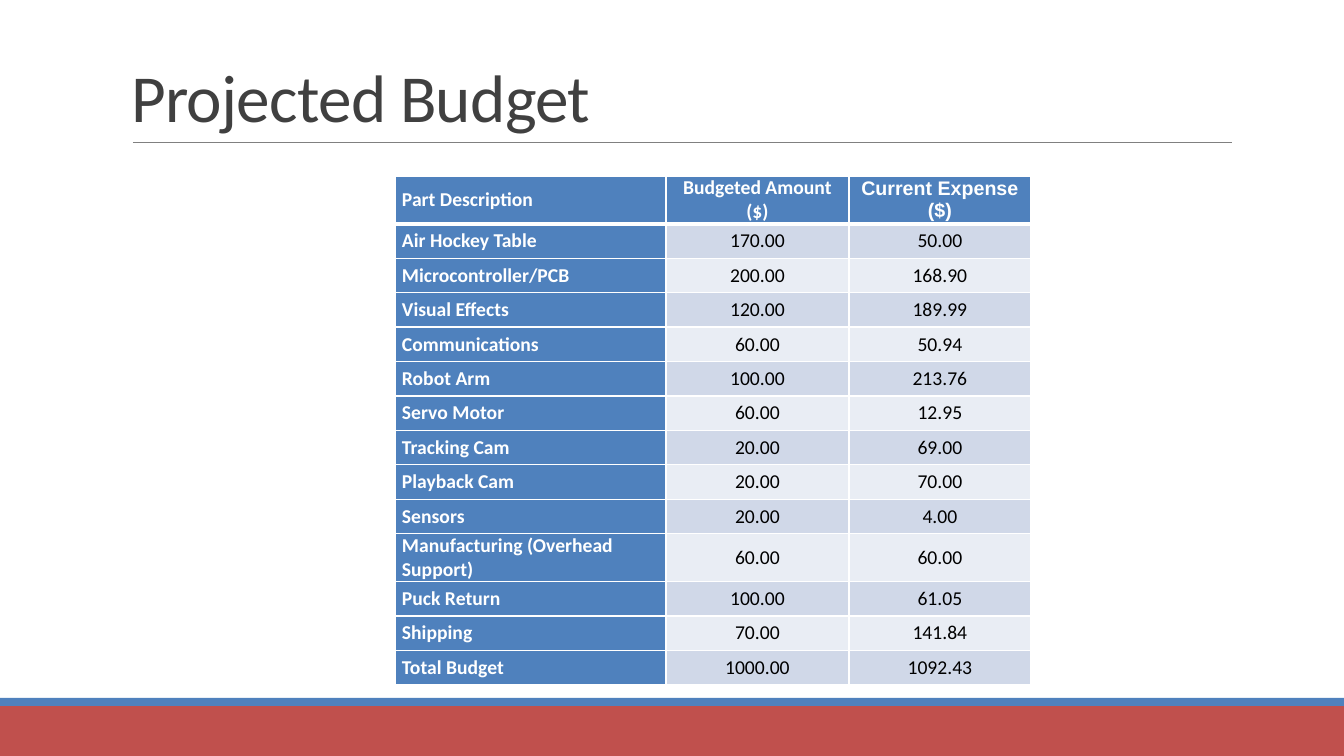
"""Build the projected budget slide with its expense table."""
from dataclasses import dataclass

from lxml.etree import SubElement
from pptx import Presentation
from pptx.dml.color import RGBColor
from pptx.enum.shapes import MSO_CONNECTOR, MSO_SHAPE
from pptx.enum.text import MSO_ANCHOR, MSO_AUTO_SIZE, PP_ALIGN
from pptx.oxml.ns import qn
from pptx.slide import Slide
from pptx.table import _Cell
from pptx.util import Emu, Pt

EMU_PER_PX = 914400 / 100.8
WHITE = RGBColor(0xFF, 0xFF, 0xFF)
BLACK = RGBColor(0x00, 0x00, 0x00)
BLUE = RGBColor(0x4F, 0x81, 0xBD)
RED = RGBColor(0xC0, 0x50, 0x4D)
GRAY = RGBColor(0x80, 0x80, 0x80)
TITLE_GRAY = RGBColor(0x40, 0x40, 0x40)
BAND_COLORS = (RGBColor(0xD0, 0xD8, 0xE8), RGBColor(0xE9, 0xED, 0xF4))

TABLE_LEFT, TABLE_TOP = 395, 176
COLUMN_WIDTHS = (271, 183, 182)
HEADER_HEIGHT = 38
BODY_HEIGHT = 448


@dataclass(frozen=True)
class Band:
    """A full-width colour band at the foot of the slide."""

    top: int
    height: int
    color: RGBColor


@dataclass(frozen=True)
class BudgetLine:
    """One row of the budget table."""

    description: str
    budgeted: str
    expense: str


FOOTER_BANDS = (Band(706, 50, RED), Band(698, 8, BLUE))
HEADER = BudgetLine("Part Description", "Budgeted Amount ($)", "Current Expense ($)")
BUDGET = (
    BudgetLine("Air Hockey Table", "170.00", "50.00"),
    BudgetLine("Microcontroller/PCB", "200.00", "168.90"),
    BudgetLine("Visual Effects", "120.00", "189.99"),
    BudgetLine("Communications", "60.00", "50.94"),
    BudgetLine("Robot Arm", "100.00", "213.76"),
    BudgetLine("Servo Motor", "60.00", "12.95"),
    BudgetLine("Tracking Cam", "20.00", "69.00"),
    BudgetLine("Playback Cam", "20.00", "70.00"),
    BudgetLine("Sensors", "20.00", "4.00"),
    BudgetLine("Manufacturing (Overhead Support)", "60.00", "60.00"),
    BudgetLine("Puck Return", "100.00", "61.05"),
    BudgetLine("Shipping", "70.00", "141.84"),
    BudgetLine("Total Budget", "1000.00", "1092.43"),
)


def px(length: float) -> Emu:
    """Convert pixels to EMU."""
    return Emu(round(length * EMU_PER_PX))


def add_band(slide: Slide, band: Band) -> None:
    """Draw one footer band."""
    shape = slide.shapes.add_shape(
        MSO_SHAPE.RECTANGLE, 0, px(band.top), px(1344), px(band.height)
    )
    shape.shadow.inherit = False
    shape.fill.solid()
    shape.fill.fore_color.rgb = band.color
    shape.line.fill.background()


def add_title_rule(slide: Slide) -> None:
    """Draw the thin line below the title."""
    rule = slide.shapes.add_connector(
        MSO_CONNECTOR.STRAIGHT, px(133), px(142), px(1232), px(142)
    )
    rule.line.color.rgb = GRAY
    rule.line.width = Pt(0.5)
    SubElement(rule._element.spPr, qn("a:effectLst"))


def format_title(slide: Slide, text: str) -> None:
    """Place and format the title placeholder."""
    title = slide.shapes.title
    title.left, title.top, title.width, title.height = px(121), px(31), px(1109), px(110)
    text_frame = title.text_frame
    text_frame.text = text
    text_frame.word_wrap = True
    text_frame.auto_size = MSO_AUTO_SIZE.NONE
    text_frame.vertical_anchor = MSO_ANCHOR.BOTTOM
    paragraph = text_frame.paragraphs[0]
    paragraph.alignment = PP_ALIGN.LEFT
    paragraph.line_spacing = 0.85
    run = paragraph.runs[0]
    run.font.name = "Calibri"
    run.font.size = Pt(48)
    run.font.color.rgb = TITLE_GRAY
    run._r.get_or_add_rPr().set("spc", "-50")


def add_borders(cell: _Cell, top: int, bottom: int) -> None:
    """Give a cell white borders, with top and bottom widths in points."""
    properties = cell._tc.get_or_add_tcPr()
    for side, width in (("L", 1), ("R", 1), ("T", top), ("B", bottom)):
        line = SubElement(properties, qn(f"a:ln{side}"), w=str(Pt(width)))
        fill = SubElement(line, qn("a:solidFill"))
        SubElement(fill, qn("a:srgbClr"), val=str(WHITE))


def format_cell(cell: _Cell, text: str, row: int, column: int) -> None:
    """Fill in one table cell and style it by its place."""
    is_heading = row == 0 or column == 0
    add_borders(cell, top=3 if row == 1 else 1, bottom=3 if row == 0 else 1)
    cell.fill.solid()
    cell.fill.fore_color.rgb = BLUE if is_heading else BAND_COLORS[(row - 1) % 2]
    cell.margin_left = cell.margin_right = px(7)
    cell.margin_top = cell.margin_bottom = 0
    cell.vertical_anchor = MSO_ANCHOR.MIDDLE
    cell.text_frame.text = text
    paragraph = cell.text_frame.paragraphs[0]
    paragraph.alignment = PP_ALIGN.LEFT if column == 0 else PP_ALIGN.CENTER
    font = paragraph.runs[0].font
    font.name = "Arial" if (row, column) == (0, 2) else "Calibri"
    font.size = Pt(14)
    font.bold = is_heading
    font.color.rgb = WHITE if is_heading else BLACK


def add_budget_table(slide: Slide) -> None:
    """Draw the budget table."""
    lines = (HEADER, *BUDGET)
    table = slide.shapes.add_table(
        len(lines), len(COLUMN_WIDTHS), px(TABLE_LEFT), px(TABLE_TOP),
        px(sum(COLUMN_WIDTHS)), px(HEADER_HEIGHT + BODY_HEIGHT),
    ).table
    table.first_col = True
    for column, width in enumerate(COLUMN_WIDTHS):
        table.columns[column].width = px(width)
    for row, line in enumerate(lines):
        table.rows[row].height = px(BODY_HEIGHT / len(BUDGET) if row else HEADER_HEIGHT)
        for column, text in enumerate((line.description, line.budgeted, line.expense)):
            format_cell(table.cell(row, column), text, row, column)


def main() -> None:
    """Build and save the presentation."""
    presentation = Presentation()
    presentation.slide_width, presentation.slide_height = px(1344), px(756)
    slide = presentation.slides.add_slide(presentation.slide_layouts[5])
    for band in FOOTER_BANDS:
        add_band(slide, band)
    add_title_rule(slide)
    format_title(slide, "Projected Budget")
    add_budget_table(slide)
    presentation.save("out.pptx")


if __name__ == "__main__":
    main()
